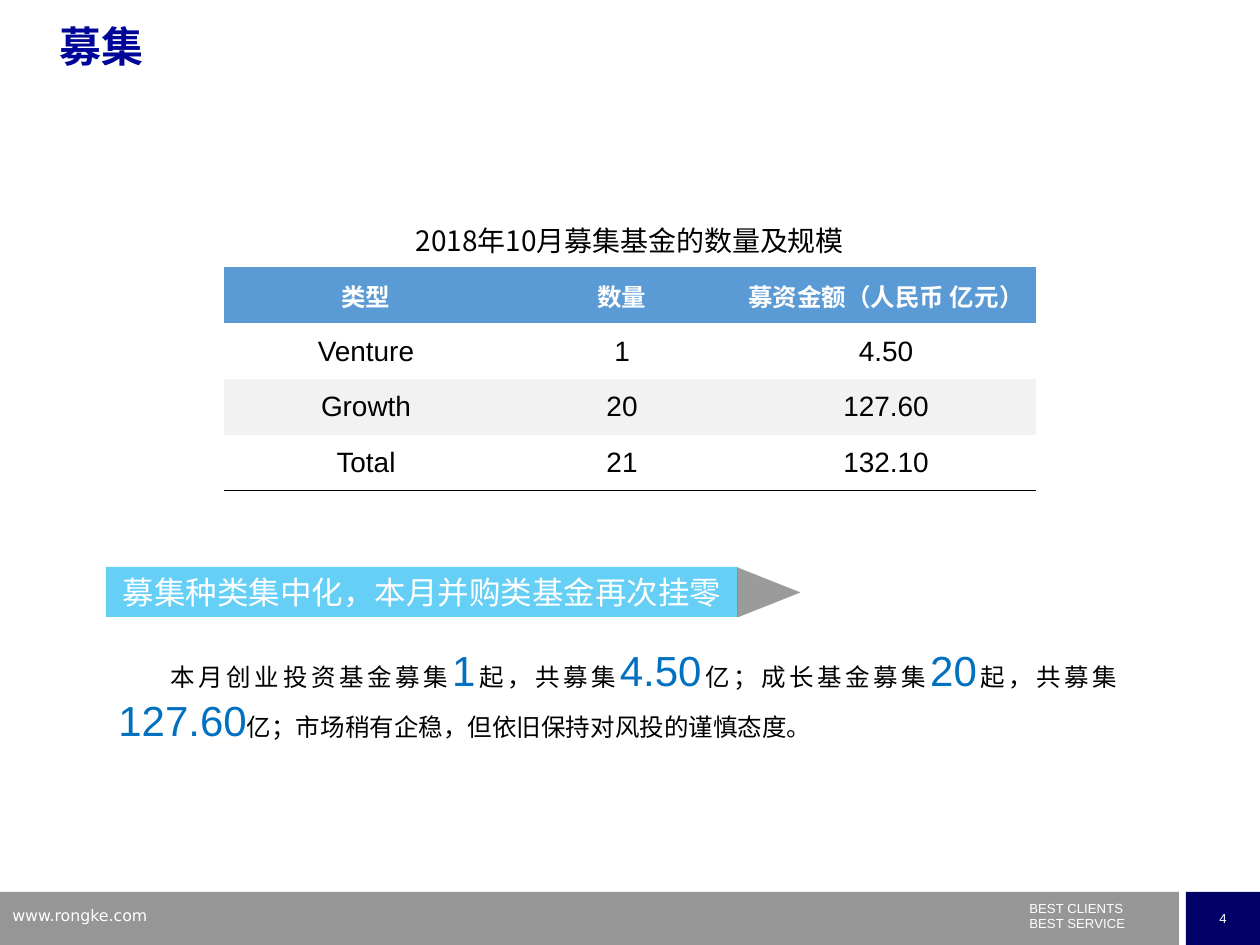
from lxml import etree
from pptx import Presentation
from pptx import util as u
from pptx.dml.color import RGBColor
from pptx.enum import shapes, text
from pptx.oxml import ns

ARIAL = "Arial"
CJK = "Noto Sans CJK SC"
CAPTION_FONT = "Noto Sans CJK JP"
WHITE, BLACK, BLUE = "FFFFFF", "000000", "0070C0"
NO_TABLE_STYLE = "{2D5ABB26-0587-4C30-8999-92F81FD0307C}"
CENTER, MIDDLE = text.PP_ALIGN.CENTER, text.MSO_ANCHOR.MIDDLE


def px(length):
    """Turn pixels, 126 to the inch, into EMU."""
    return u.Emu(round(length * 914400 / 126))


def rgb(color):
    return RGBColor.from_string(color)


def add_child(parent, tag, **attributes):
    return etree.SubElement(parent, ns.qn(tag), attributes)


def set_font(font, size, color, name=ARIAL, bold=False, east_asian=CJK):
    font.size = u.Pt(size)
    font.bold = bold
    font.color.rgb = rgb(color)
    font.name = name
    add_child(font._element, "a:ea", typeface=east_asian)


def write(paragraph, words, size, color, name=ARIAL, align=None, **options):
    paragraph.text = words
    paragraph.alignment = align
    set_font(paragraph.font, size, color, name, **options)


def add_shape(slide, kind, box, color, alpha=None):
    shape = slide.shapes.add_shape(kind, *map(px, box))
    shape.shadow.inherit = False
    shape.fill.solid()
    shape.fill.fore_color.rgb = rgb(color)
    shape.line.fill.background()
    if alpha:
        fill_color = shape._element.spPr.find(".//" + ns.qn("a:srgbClr"))
        add_child(fill_color, "a:alpha", val=str(alpha * 1000))
    return shape


def add_text_box(slide, box):
    frame = slide.shapes.add_textbox(*map(px, box)).text_frame
    frame.word_wrap = True
    return frame


def add_title(slide):
    title = slide.shapes.title
    title.left, title.top, title.width, title.height = map(px, (47, 20, 1134, 88))
    title.text_frame.vertical_anchor = text.MSO_ANCHOR.TOP
    paragraph = title.text_frame.paragraphs[0]
    write(paragraph, "募集", 24, "000798", align=text.PP_ALIGN.LEFT, bold=True)
    paragraph.line_spacing = 0.9


def add_footer(slide):
    rectangle = shapes.MSO_SHAPE.RECTANGLE
    add_shape(slide, rectangle, (0, 892, 1179, 53), "969696")
    number = add_shape(slide, rectangle, (1186, 892, 74, 53), "000066").text_frame
    number.vertical_anchor = MIDDLE
    write(number.paragraphs[0], "4", 7.5, WHITE, align=CENTER)

    slogan = add_text_box(slide, (1017, 900, 189, 37))
    slogan.margin_top = 0
    write(slogan.paragraphs[0], "BEST CLIENTS", 7.5, WHITE)
    write(slogan.add_paragraph(), "BEST SERVICE", 7.5, WHITE)

    address = add_text_box(slide, (0, 900, 302, 33))
    write(address.paragraphs[0], "www.rongke.com", 9, WHITE, "DejaVu Sans")


def fill_cell(cell, words, size, color, name, fill=None, bold=False, east_asian=CJK):
    cell.margin_left = cell.margin_right = cell.margin_top = px(1)
    cell.margin_bottom = 0
    cell.vertical_anchor = MIDDLE
    if fill:
        cell.fill.solid()
        cell.fill.fore_color.rgb = rgb(fill)
    else:
        cell.fill.background()
    write(cell.text_frame.paragraphs[0], words, size, color, name, CENTER,
          bold=bold, east_asian=east_asian)


def add_bottom_border(cell):
    properties = cell._tc.get_or_add_tcPr()
    line = etree.Element(ns.qn("a:lnB"), w=str(u.Pt(1)))
    add_child(add_child(line, "a:solidFill"), "a:srgbClr", val=BLACK)
    properties.insert(0, line)


def add_fund_table(slide):
    header = ("类型", "数量", "募资金额（人民币 亿元）")
    body = (
        ("Venture", "1", "4.50"),
        ("Growth", "20", "127.60"),
        ("Total", "21", "132.10"),
    )
    widths, row_height = (284, 228, 300), 56
    row_count = len(body) + 2
    table = slide.shapes.add_table(
        row_count, len(widths),
        *map(px, (224, 211, sum(widths), row_count * row_height))).table
    table.first_row = table.horz_banding = False
    table._tbl.tblPr.find(ns.qn("a:tableStyleId")).text = NO_TABLE_STYLE
    for column, width in zip(table.columns, widths):
        column.width = px(width)
    for row in table.rows:
        row.height = px(row_height)

    table.cell(0, 0).merge(table.cell(0, 2))
    fill_cell(table.cell(0, 0), "2018年10月募集基金的数量及规模", 16, BLACK,
              CAPTION_FONT, east_asian=CAPTION_FONT)
    for column, words in enumerate(header):
        fill_cell(table.cell(1, column), words, 14, WHITE, CJK, "5B9BD5", bold=True)
    for row, values in enumerate(body, start=2):
        fill = "F2F2F2" if row % 2 else None
        for column, words in enumerate(values):
            fill_cell(table.cell(row, column), words, 16, BLACK, ARIAL, fill)
    for column in range(len(widths)):
        add_bottom_border(table.cell(row_count - 1, column))


def add_banner(slide):
    banner = add_shape(slide, shapes.MSO_SHAPE.RECTANGLE, (106, 567, 632, 50),
                       "00B0F0", alpha=60).text_frame
    banner.word_wrap = True
    banner.vertical_anchor = MIDDLE
    write(banner.paragraphs[0], "募集种类集中化，本月并购类基金再次挂零",
          18, WHITE, CJK, CENTER)
    tip = add_shape(slide, shapes.MSO_SHAPE.ISOSCELES_TRIANGLE, (744, 561, 50, 63),
                    "595959", alpha=60)
    tip.rotation = 90


def add_summary(slide):
    """Add the paragraph in which words and highlighted figures alternate."""
    parts = ("本月创业投资基金募集", "1", "起，共募集", "4.50", "亿；成长基金募集",
             "20", "起，共募集", "127.60",
             "亿；市场稍有企稳，但依旧保持对风投的谨慎态度。")
    paragraph = add_text_box(slide, (106, 638, 1024, 115)).paragraphs[0]
    paragraph.alignment = text.PP_ALIGN.JUSTIFY
    paragraph._p.get_or_add_pPr().set("indent", str(px(52)))
    for index, words in enumerate(parts):
        run = paragraph.add_run()
        run.text = words
        if index % 2:
            set_font(run.font, 24, BLUE)
        else:
            set_font(run.font, 14, BLACK, CJK)


def main():
    presentation = Presentation()
    presentation.slide_width, presentation.slide_height = px(1260), px(945)
    slide = presentation.slides.add_slide(presentation.slide_layouts[5])
    add_footer(slide)
    add_summary(slide)
    add_banner(slide)
    add_title(slide)
    add_fund_table(slide)
    presentation.save("out.pptx")


if __name__ == "__main__":
    main()
